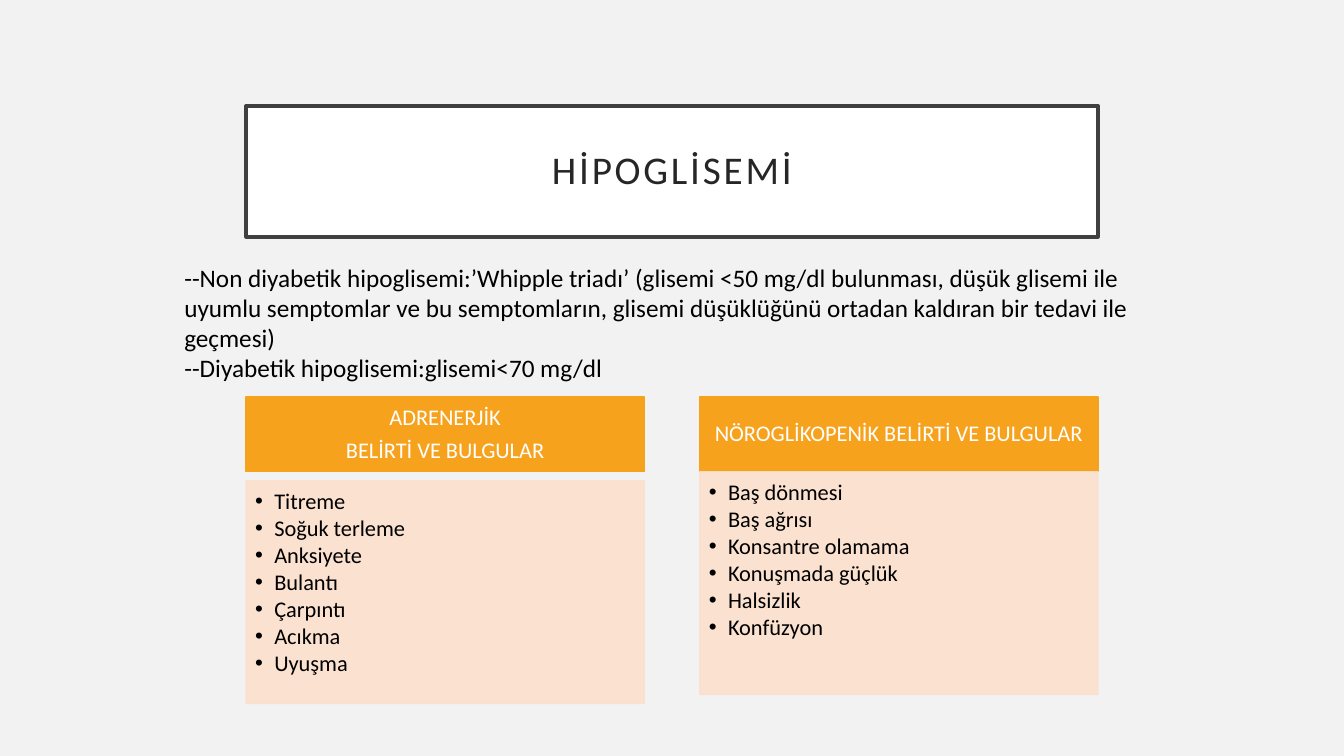
from pptx import Presentation
from pptx.dml.color import RGBColor
from pptx.enum.text import MSO_ANCHOR, MSO_AUTO_SIZE, PP_ALIGN
from pptx.oxml.ns import qn
from pptx.util import Inches, Pt
from lxml import etree

MID, TOP = MSO_ANCHOR.MIDDLE, MSO_ANCHOR.TOP
MIDDLE, LEFT = PP_ALIGN.CENTER, PP_ALIGN.LEFT
FIXED = MSO_AUTO_SIZE.NONE

TITLE = "HİPOGLİSEMİ"
INTRO = [
    "--Non diyabetik hipoglisemi:’Whipple triadı’ (glisemi <50 mg/dl bulunması, "
    "düşük glisemi ile uyumlu semptomlar ve bu semptomların, glisemi düşüklüğünü "
    "ortadan kaldıran bir tedavi ile geçmesi)",
    "--Diyabetik hipoglisemi:glisemi<70 mg/dl",
]
GROUPS = [
    (["ADRENERJİK", "BELİRTİ VE BULGULAR"],
     ["Titreme", "Soğuk terleme", "Anksiyete", "Bulantı", "Çarpıntı", "Acıkma", "Uyuşma"],
     0.09),
    (["NÖROGLİKOPENİK BELİRTİ VE BULGULAR"],
     ["Baş dönmesi", "Baş ağrısı", "Konsantre olamama", "Konuşmada güçlük",
      "Halsizlik", "Konfüzyon"],
     0),
]

WIDE, HIGH = 13.33, 7.5
EDGE, SPAN = 2.44, 8.45
COL, PITCH = 3.95, 4.5
HEAD_TOP, HEAD, LIST = 3.94, 0.74, 2.21


def color(code):
    return RGBColor.from_string(code)


def put(shape, *box):
    shape.left, shape.top, shape.width, shape.height = map(Inches, box)


def paint(shape, fill, line, weight, alpha=None):
    shape.fill.solid()
    shape.fill.fore_color.rgb = color(fill)
    shape.line.color.rgb = color(line)
    shape.line.width = Pt(weight)
    if alpha:
        for node in list(shape._element.spPr.iter(qn("a:srgbClr"))):
            etree.SubElement(node, qn("a:alpha"), val=str(alpha * 1000))


def write(shape, lines, size, ink, inset, anchor, para):
    frame = shape.text_frame
    frame.text = "\n".join(lines)
    left, top, right, bottom = map(Inches, inset)
    form = dict(word_wrap=True, auto_size=FIXED, vertical_anchor=anchor,
                margin_left=left, margin_top=top, margin_right=right, margin_bottom=bottom)
    for key, val in form.items():
        setattr(frame, key, val)
    for part in frame.paragraphs:
        for key, val in para.items():
            setattr(part, key, val)
        for run in part.runs:
            for key, val in dict(size=Pt(size), name="Calibri", bold=False).items():
                setattr(run.font, key, val)
            run.font.color.rgb = color(ink)


def style(align, line, after):
    return dict(alignment=align, line_spacing=line, space_before=Pt(0), space_after=Pt(after))


deck = Presentation()
deck.slide_width, deck.slide_height = Inches(WIDE), Inches(HIGH)
slide = deck.slides.add_slide(deck.slide_layouts.get_by_name("Comparison"))
slide.background.fill.solid()
slide.background.fill.fore_color.rgb = color("F2F2F2")
for spot in list(slide.placeholders):
    if spot.placeholder_format.idx > 4:
        spot._element.getparent().remove(spot._element)
slots = {spot.placeholder_format.idx: spot for spot in slide.placeholders}

title = slots[0]
put(title, EDGE, 1.05, SPAN, 1.3)
paint(title, "FFFFFF", "404040", 2.5)
write(title, [TITLE], 28, "262626", [0.2] * 4, MID, style(MIDDLE, 0.9, 0))
title.text_frame.paragraphs[0].runs[0].font._element.set("spc", "200")

for col, (names, signs, gap) in enumerate(GROUPS):
    left = EDGE + col * PITCH
    head, body = slots[1 + 2 * col], slots[2 + 2 * col]
    put(head, left, HEAD_TOP, COL, HEAD)
    paint(head, "F6A21D", "F6A21D", 1)
    write(head, names, 16, "FFFFFF", (0.12, 0.07, 0.12, 0.07), MID, style(MIDDLE, 0.9, 6))
    put(body, left, HEAD_TOP + HEAD + gap, COL, LIST)
    paint(body, "FBE0CD", "FBE0CD", 1, 90)
    write(body, signs, 16, "000000", (0.09, 0.09, 0.12, 0.14), TOP, style(LEFT, 0.9, 2))
    for part in body.text_frame.paragraphs:
        props = part._p.get_or_add_pPr()
        props.set("marL", str(Inches(0.19)))
        props.set("indent", str(-Inches(0.19)))
        etree.SubElement(props, qn("a:buChar"), char="•")

intro = slide.shapes.add_textbox(*map(Inches, (1.73, 2.55, 9.77, 1.31)))
write(intro, INTRO, 18, "000000", (0.1, 0.05, 0.1, 0.05), TOP, style(LEFT, 1.0, 0))

deck.save("out.pptx")
